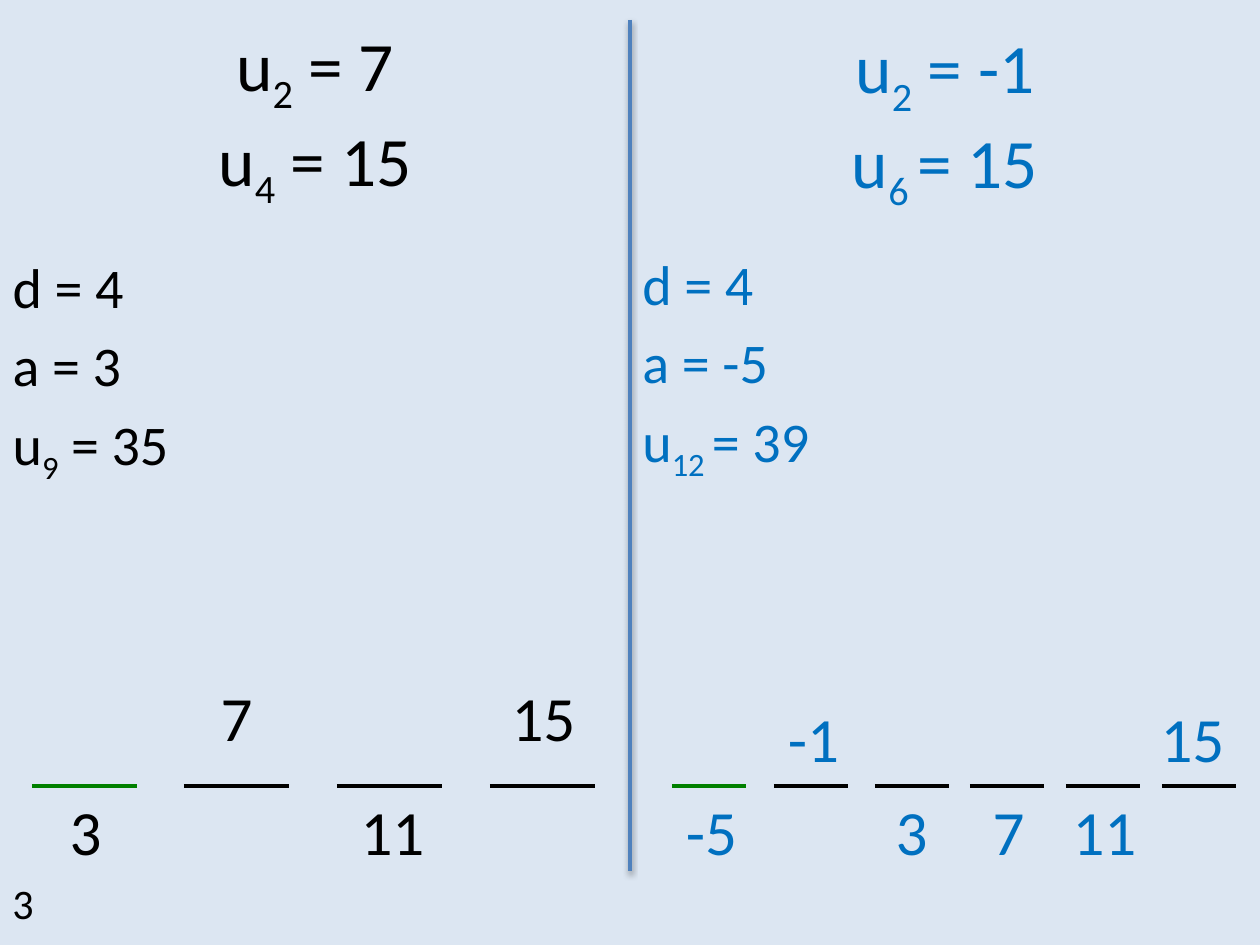
from lxml import etree
from pptx import Presentation
from pptx.dml.color import RGBColor
from pptx.enum.shapes import MSO_CONNECTOR
from pptx.enum.text import MSO_ANCHOR, MSO_AUTO_SIZE, PP_ALIGN
from pptx.oxml.ns import qn
from pptx.util import Emu, Pt

LEFT, CENTER = PP_ALIGN.LEFT, PP_ALIGN.CENTER
TOP, MIDDLE = MSO_ANCHOR.TOP, MSO_ANCHOR.MIDDLE
STRAIGHT = MSO_CONNECTOR.STRAIGHT
NO_FIT = MSO_AUTO_SIZE.NONE

PX_PER_INCH = 126
FONT = "Calibri"
BLACK, BLUE, GREEN = "000000", "0070C0", "008000"
DIVIDER_BLUE, BACKGROUND = "4F81BD", "DCE6F2"

BLANK_Y = 786
LABEL_W, LABEL_H = 105, 89
# Each term: left of blank, left of label, label, top of label
LEFT_TERMS = [
    (32, 33, "3", 786),
    (184, 184, "7", 672),
    (337, 340, "11", 786),
    (490, 491, "15", 672),
]
RIGHT_TERMS = [
    (672, 659, "-5", 786),
    (774, 761, "-1", 693),
    (875, 859, "3", 786),
    (970, 956, "7", 786),
    (1066, 1052, "11", 786),
    (1162, 1140, "15", 693),
]


def px(length):
    return Emu(round(length * 914400 / PX_PER_INCH))


def rgb(color):
    return RGBColor.from_string(color)


def place(shape, left, top, width, height):
    shape.left, shape.top = px(left), px(top)
    shape.width, shape.height = px(width), px(height)


def add_box(page, left, top, width, height):
    return page.shapes.add_textbox(px(left), px(top), px(width), px(height))


def set_up_frame(box, anchor=TOP):
    frame = box.text_frame
    frame.word_wrap = True
    frame.auto_size = NO_FIT
    frame.vertical_anchor = anchor
    return frame


def write_formula(para, formula, size, color):
    """Write text in which pairs of underscores enclose a subscript."""
    for index, text in enumerate(formula.split("_")):
        for line_number, line in enumerate(text.split("\n")):
            if line_number:
                para.add_line_break()
            span = para.add_run()
            span.text = line
            span.font.size = Pt(size)
            span.font.name = FONT
            span.font.color.rgb = rgb(color)
            if index % 2:
                span.font._element.set("baseline", "-25000")


def write_heading(box, formula, color):
    para = set_up_frame(box, MIDDLE).paragraphs[0]
    para.alignment = CENTER
    write_formula(para, formula, 39.6, color)


def write_answers(box, formulas, color):
    frame = set_up_frame(box)
    for index, formula in enumerate(formulas):
        para = frame.add_paragraph() if index else frame.paragraphs[0]
        para.alignment = LEFT
        para.space_before = Pt(6.4)
        properties = para._p.get_or_add_pPr()
        properties.set("marL", "0")
        properties.set("indent", "0")
        etree.SubElement(properties, qn("a:buNone"))
        write_formula(para, formula, 32, color)


def add_label(page, left, top, width, height, text, size, color, align):
    para = set_up_frame(add_box(page, left, top, width, height)).paragraphs[0]
    para.alignment = align
    write_formula(para, text, size, color)


def add_line(page, x1, y1, x2, y2, color):
    """Add a line without shadow and return its effect list."""
    line = page.shapes.add_connector(STRAIGHT, px(x1), px(y1), px(x2), px(y2))
    line.line.color.rgb = rgb(color)
    line.line.width = Pt(2)
    return etree.SubElement(line._element.spPr, qn("a:effectLst"))


def add_divider(page):
    effects = add_line(page, 630, 20, 630, 871, DIVIDER_BLUE)
    shadow = etree.SubElement(effects, qn("a:outerShdw"), blurRad="40000",
                              dist="20000", dir="5400000", rotWithShape="0")
    shade = etree.SubElement(shadow, qn("a:srgbClr"), val=BLACK)
    etree.SubElement(shade, qn("a:alpha"), val="38000")


def add_sequence(page, terms, blank_width, color):
    """Draw the blanks of a sequence, the first in green, with their terms."""
    for index, (blank_x, label_x, text, label_y) in enumerate(terms):
        add_line(page, blank_x, BLANK_Y, blank_x + blank_width, BLANK_Y,
                 BLACK if index else GREEN)
        add_label(page, label_x, label_y, LABEL_W, LABEL_H, text, 36, color, CENTER)


def main():
    deck = Presentation()
    deck.slide_width, deck.slide_height = px(1260), px(945)
    page = deck.slides.add_slide(deck.slide_layouts[1])
    page.background.fill.solid()
    page.background.fill.fore_color.rgb = rgb(BACKGROUND)

    title, body = page.shapes.title, page.placeholders[1]
    place(title, 0, 38, 630, 158)
    write_heading(title, "u_2_ = 7\nu_4_ = 15", BLACK)
    place(body, 0, 246, 630, 624)
    write_answers(body, ["d = 4", "a = 3", "u_9_ = 35"], BLACK)

    write_heading(add_box(page, 630, 40, 630, 158), "u_2_ = -1\nu_6 _= 15", BLUE)
    write_answers(add_box(page, 630, 243, 630, 624),
                  ["d = 4", "a = -5", "u_12 _= 39"], BLUE)

    add_divider(page)
    add_sequence(page, LEFT_TERMS, 105, BLACK)
    add_sequence(page, RIGHT_TERMS, 74, BLUE)
    add_label(page, 0, 871, 131, 63, "3", 24, BLACK, LEFT)
    deck.save("out.pptx")


if __name__ == "__main__":
    main()
